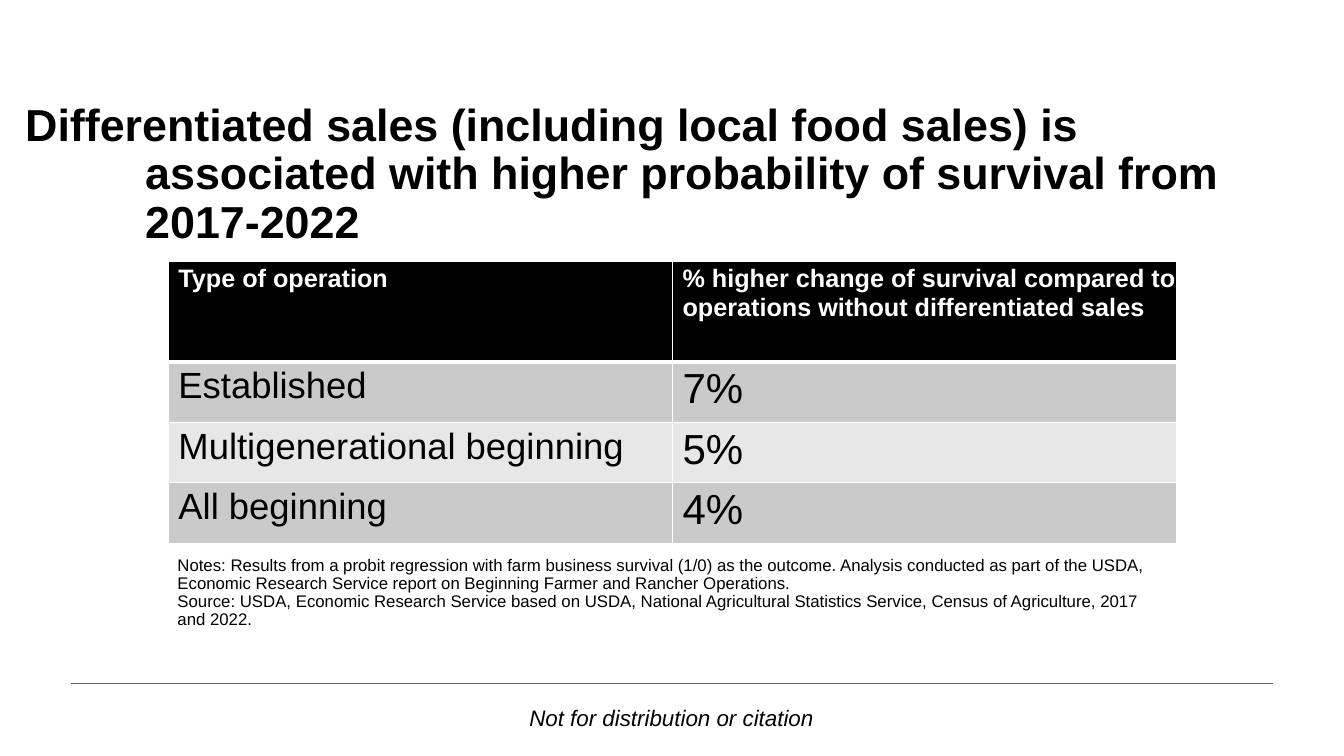
from lxml.etree import SubElement
from pptx import Presentation
from pptx.dml.color import RGBColor
from pptx.enum.shapes import MSO_CONNECTOR
from pptx.enum.text import MSO_ANCHOR, MSO_AUTO_SIZE, PP_ALIGN
from pptx.oxml.ns import qn
from pptx.util import Emu, Pt

PX_PER_INCH = 100
FONT = "Arial"
BLACK = RGBColor(0x00, 0x00, 0x00)
WHITE = RGBColor(0xFF, 0xFF, 0xFF)
RULE_GREY = RGBColor(0x5D, 0x64, 0x69)
BANDS = (RGBColor(0xCA, 0xCA, 0xCA), RGBColor(0xE7, 0xE7, 0xE7))

TITLE = ("Differentiated sales (including local food sales) is associated "
         "with higher probability of survival from 2017-2022")
HEADINGS = ("Type of operation",
            "% higher change of survival compared to operations without differentiated sales")
SURVIVAL = (("Established", "7%"), ("Multigenerational beginning", "5%"), ("All beginning", "4%"))
NOTES = (
    "Notes: Results from a probit regression with farm business survival (1/0) as the outcome. "
    "Analysis conducted as part of the USDA, Economic Research Service report on "
    "Beginning Farmer and Rancher Operations.",
    "Source: USDA, Economic Research Service based on USDA, National Agricultural Statistics "
    "Service, Census of Agriculture, 2017 and 2022.",
)
FOOTER = "Not for distribution or citation"


def px(length):
    return Emu(round(length * 914400 / PX_PER_INCH))


def write(frame, paragraphs, size, color=BLACK, bold=False, italic=False,
          spacing=None, left=0, hanging=0):
    for index, text in enumerate(paragraphs):
        paragraph = frame.paragraphs[0] if index == 0 else frame.add_paragraph()
        paragraph.text = text
        paragraph.alignment = PP_ALIGN.LEFT
        paragraph.space_before = Pt(0)
        if spacing:
            paragraph.line_spacing = Pt(spacing)
        properties = paragraph._p.get_or_add_pPr()
        properties.set("marL", str(px(left)))
        properties.set("indent", str(px(-hanging)))
        font = paragraph.font
        font.name, font.size = FONT, Pt(size)
        font.bold, font.italic = bold, italic
        font.color.rgb = color


def prepare_frame(shape, top=0):
    frame = shape.text_frame
    frame.word_wrap = True
    frame.auto_size = MSO_AUTO_SIZE.NONE
    frame.vertical_anchor = MSO_ANCHOR.TOP
    frame.margin_left = frame.margin_right = frame.margin_bottom = 0
    frame.margin_top = px(top)
    return frame


def add_text(slide, box, paragraphs, top=0, **style):
    shape = slide.shapes.add_textbox(*map(px, box))
    write(prepare_frame(shape, top), paragraphs, **style)


def place_title(slide, box):
    title = slide.shapes.title
    title.left, title.top, title.width, title.height = map(px, box)
    write(prepare_frame(title, top=7), [TITLE], size=32, bold=True,
          spacing=34.6, left=121, hanging=119)


def set_borders(cell, top, bottom):
    properties = cell._tc.get_or_add_tcPr()
    for side, points in (("L", 1), ("R", 1), ("T", top), ("B", bottom)):
        line = SubElement(properties, qn(f"a:ln{side}"), w=str(Pt(points)))
        fill = SubElement(line, qn("a:solidFill"))
        SubElement(fill, qn("a:srgbClr"), val=str(WHITE))


def add_survival_table(slide, box, header_height):
    left, top, width, height = box
    rows = (HEADINGS, *SURVIVAL)
    frame = slide.shapes.add_table(len(rows), len(HEADINGS), *map(px, box))
    table = frame.table
    for column in table.columns:
        column.width = px(width / len(HEADINGS))
    for row_index, texts in enumerate(rows):
        is_header = row_index == 0
        body_height = (height - header_height) / len(SURVIVAL)
        table.rows[row_index].height = px(header_height if is_header else body_height)
        for column_index, text in enumerate(texts):
            cell = table.cell(row_index, column_index)
            cell.margin_left, cell.margin_top = px(10), px(4)
            cell.margin_right = cell.margin_bottom = 0
            set_borders(cell, top=3 if row_index == 1 else 1, bottom=3 if is_header else 1)
            cell.fill.solid()
            cell.fill.fore_color.rgb = BLACK if is_header else BANDS[(row_index - 1) % 2]
            write(cell.text_frame, [text], size=18 if is_header else (26, 30)[column_index],
                  color=WHITE if is_header else BLACK, bold=is_header)


def add_footer(slide, box):
    left, top, width, height = box
    rule = slide.shapes.add_connector(
        MSO_CONNECTOR.STRAIGHT, px(left), px(top), px(left + width), px(top))
    rule.line.color.rgb = RULE_GREY
    rule.line.width = Pt(0.5)
    SubElement(rule._element.spPr, qn("a:effectLst"))
    add_text(slide, (left + 454, top + 21, 286, height - 21), [FOOTER],
             size=16, italic=True, spacing=18.6, left=1)


def main():
    presentation = Presentation()
    presentation.slide_width, presentation.slide_height = px(1333), px(750)
    slide = presentation.slides.add_slide(presentation.slide_layouts[5])
    add_footer(slide, (70, 678, 1193, 49))
    place_title(slide, (23, 94, 1287, 104))
    add_text(slide, (175, 548, 961, 77), NOTES, top=4, size=12, spacing=13, left=1)
    add_survival_table(slide, (167, 259, 1000, 280), header_height=100)
    presentation.save("out.pptx")


if __name__ == "__main__":
    main()
